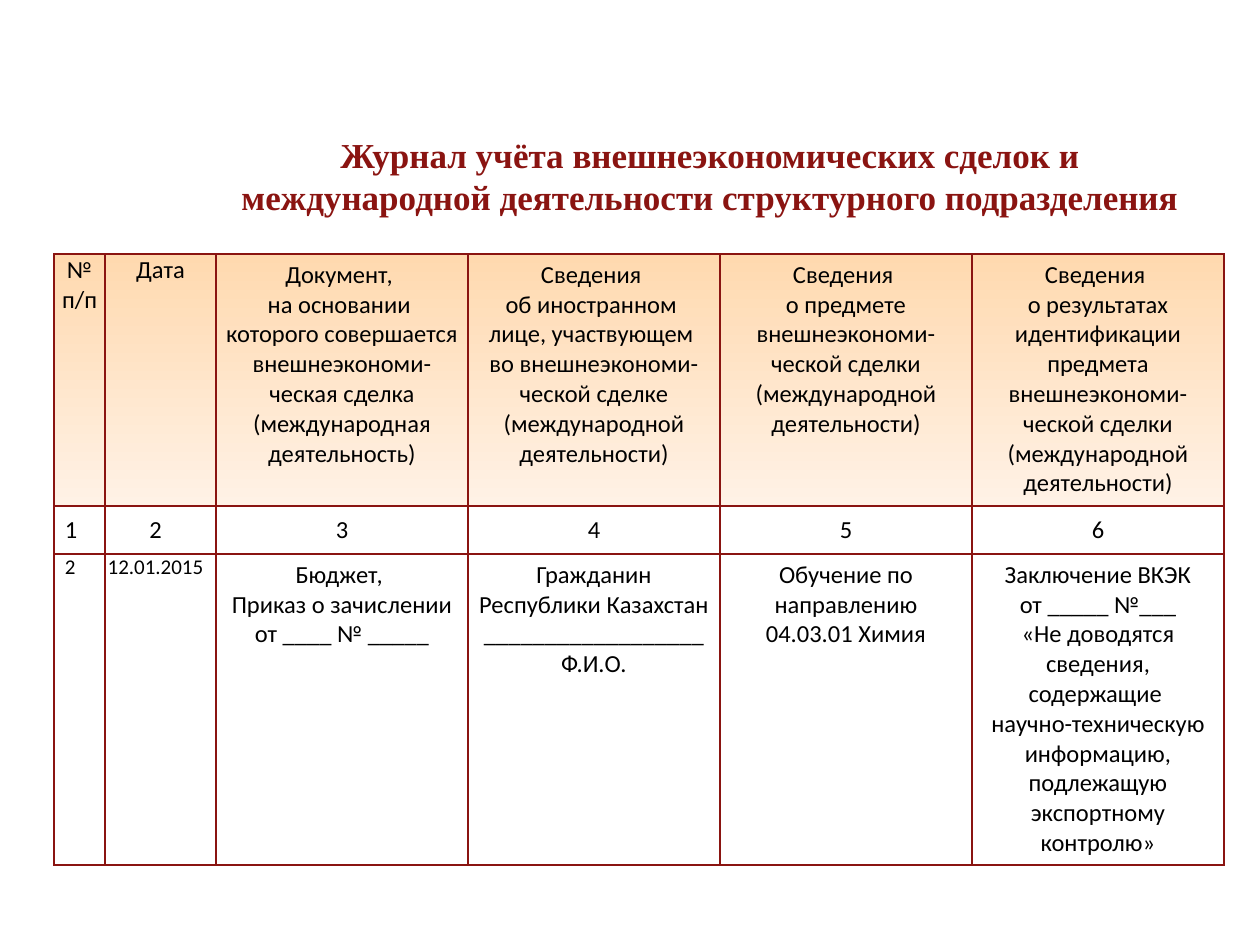
"""Build the slide with the register of foreign trade deals."""
from lxml import etree
from pptx import Presentation
from pptx.dml.color import RGBColor as Rgb
from pptx.enum.text import MSO_ANCHOR as Anchor, PP_ALIGN as Align
from pptx.oxml import parse_xml
from pptx.oxml.ns import nsdecls, qn
from pptx.util import Emu, Pt

THEME = {
    "accent": "8A1411", "text": "000000", "head_top": "FFD9AF", "head_bottom": "FFF2E6",
    "title_font": "Times New Roman", "table_font": "Calibri",
    "title_size": 20, "table_size": 14, "small_size": 12, "border": 1,
}


def px(length):
    return Emu(round(length * 914400 / 126))


def write(frame, lines, align, font, size, color, bold):
    frame.text = "\n".join(lines)
    for para in frame.paragraphs:
        para.alignment = align
        for span in para.runs:
            span.font.name, span.font.size, span.font.bold = font, Pt(size), bold
            span.font.color.rgb = Rgb.from_string(color)


deck = Presentation()
deck.slide_width, deck.slide_height = px(1260), px(945)
page = deck.slides.add_slide(deck.slide_layouts[6])

title = page.shapes.add_textbox(px(213), px(96), px(994), px(158)).text_frame
title.word_wrap = True
title.vertical_anchor = Anchor.MIDDLE
title.margin_left = title.margin_right = title.margin_top = title.margin_bottom = px(6)
write(title, ["Журнал учёта внешнеэкономических сделок и международной деятельности структурного подразделения"],
      Align.CENTER, THEME["title_font"], THEME["title_size"], THEME["accent"], True)

ROWS = [
    [
        ["№", "п/п"],
        ["Дата"],
        ["Документ, ", "на основании ",
         "которого совершается внешнеэкономи-ческая сделка (международная деятельность)"],
        ["Сведения ", "об иностранном ", "лице, участвующем ",
         "во внешнеэкономи-ческой сделке (международной деятельности)"],
        ["Сведения ", "о предмете внешнеэкономи-ческой сделки (международной деятельности)"],
        ["Сведения ",
         "о результатах идентификации предмета внешнеэкономи-ческой сделки (международной деятельности)"],
    ],
    [["1"], ["2"], ["3"], ["4"], ["5"], ["6"]],
    [
        ["2"],
        ["12.01.2015"],
        ["Бюджет, ", "Приказ о зачислении от ____ № _____"],
        ["Гражданин Республики Казахстан __________________", "Ф.И.О."],
        ["Обучение по направлению", "04.03.01 Химия"],
        ["Заключение ВКЭК", "от _____ №___", "«Не доводятся сведения, содержащие ",
         "научно-техническую информацию, подлежащую экспортному контролю»"],
    ],
]
WIDTHS = [51, 111, 252, 252, 252, 252]
HEIGHTS = [252, 48, 311]

table = page.shapes.add_table(len(ROWS), len(WIDTHS), px(54), px(254), px(sum(WIDTHS)), px(sum(HEIGHTS))).table
table.first_row = table.horz_banding = False
for column, width in zip(table.columns, WIDTHS):
    column.width = px(width)
for row, height in zip(table.rows, HEIGHTS):
    row.height = px(height)

for row_index, row in enumerate(ROWS):
    for column_index, lines in enumerate(row):
        cell = table.cell(row_index, column_index)
        narrow = column_index < 2
        body = row_index > 0
        margins = [6, 6, 6, 6]
        if narrow:
            margins = [1, 1, 1, 0]
            if body:
                margins[column_index * 2] = 11
        cell.margin_left, cell.margin_top, cell.margin_right, cell.margin_bottom = map(px, margins)
        cell.vertical_anchor = Anchor.MIDDLE if row_index == 1 else Anchor.TOP
        align = Align.LEFT if body and column_index == 0 else Align.CENTER
        size = THEME["small_size"] if row_index == 2 and narrow else THEME["table_size"]
        write(cell.text_frame, lines, align, THEME["table_font"], size, THEME["text"], False)

        properties = cell._tc.get_or_add_tcPr()
        for side in ("lnL", "lnR", "lnT", "lnB"):
            border = parse_xml(f'<a:{side} {nsdecls("a")} w="{Pt(THEME["border"])}"/>')
            paint = etree.SubElement(border, qn("a:solidFill"))
            etree.SubElement(paint, qn("a:srgbClr"), val=THEME["accent"])
            properties.append(border)

        if body:
            cell.fill.background()
        else:
            cell.fill.gradient()
            cell.fill.gradient_angle = 270
            for stop, color in zip(cell.fill.gradient_stops, ("head_top", "head_bottom")):
                stop.color.rgb = Rgb.from_string(THEME[color])

deck.save("out.pptx")
